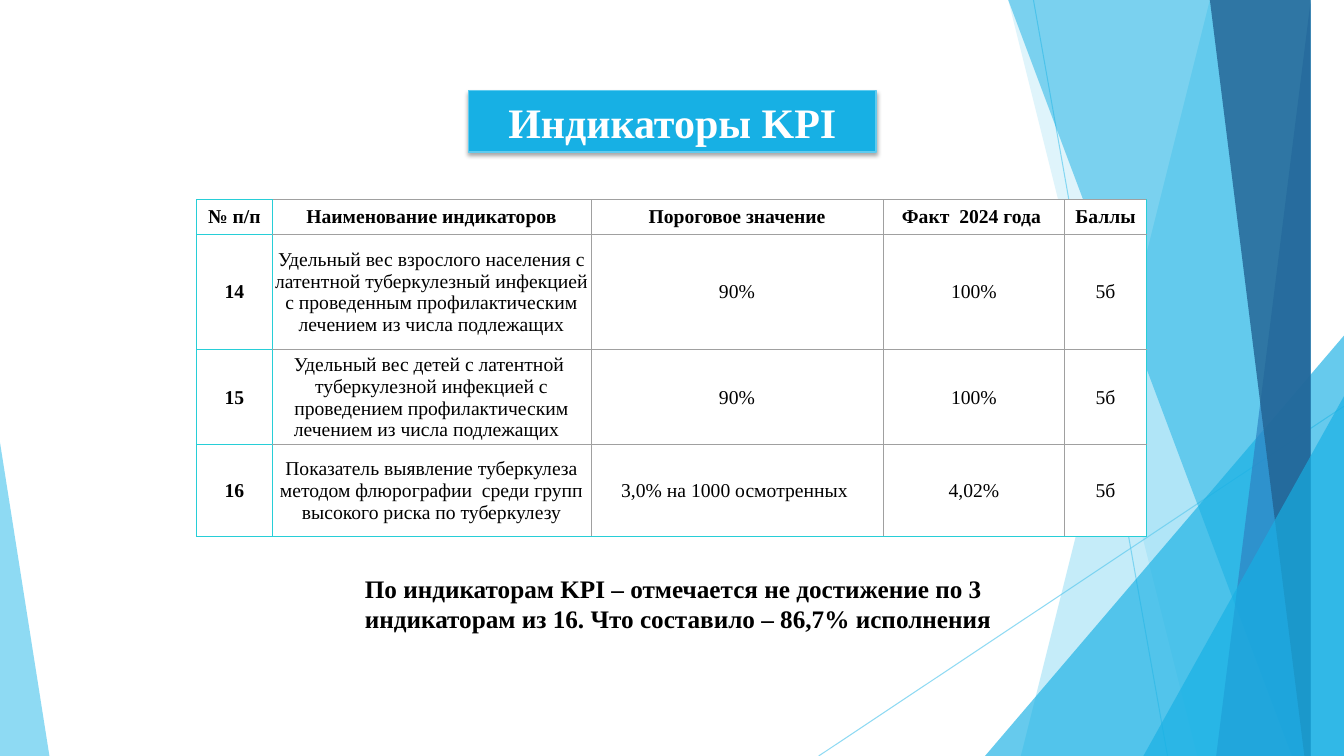
from lxml import etree
from pptx import Presentation
from pptx import util as u
from pptx.dml.color import RGBColor
from pptx.enum import shapes, text
from pptx.oxml.ns import qn

FONT = "Times New Roman"
SKY, BLUE, TEAL, GREY = "5FCBEF", "17B0E4", "27CED7", "A0A0A0"
WIDE, HIGH = 13.33, 7.5

RAYS = [((10.25, 0), (11.58, HIGH)), ((WIDE, 4.03), (8.12, HIGH))]
BANDS = [
    ("band", 12.28, 10.04, SKY, 36),
    ("band", 10.5, 11.83, SKY, 20),
    ("peak", (9.77, 3.33, 3.56, 4.17), 1, BLUE, 66),
    ("band", 10.21, 12.91, BLUE, 50),
    ("band", 13.03, 11.92, "2E83C3", 70),
    ("band", 11.96, 13.18, "226292", 80),
    ("peak", (11.34, 3.93, 1.99, 3.57), 1, BLUE, 66),
    ("peak", (0, 4.39, 0.49, 3.11), 0, SKY, 70),
]
TITLE = "Индикаторы KPI"
COLS = [0.75, 3.16, 2.9, 1.8, 0.81]
ROWS = [0.34, 1.15, 0.94, 0.91]
CELLS = [
    ("№ п/п", "Наименование индикаторов", "Пороговое значение",
     "Факт  2024 года ", "Баллы"),
    ("14", "Удельный вес взрослого населения с латентной туберкулезный "
     "инфекцией с проведенным профилактическим лечением из числа подлежащих",
     "90%", "100%", "5б"),
    ("15", "Удельный вес детей с латентной  туберкулезной инфекцией с "
     "проведением профилактическим лечением из числа подлежащих  ",
     "90%", "100%", "5б"),
    ("16", "Показатель выявление туберкулеза методом флюрографии  среди "
     "групп высокого риска по туберкулезу",
     "3,0% на 1000 осмотренных ", "4,02%", "5б"),
]
NOTE = ("По индикаторам KPI – отмечается не достижение по 3 индикаторам "
        "из 16. Что составило – 86,7% исполнения")


def paint(form, tone, alpha=100):
    form.solid()
    form.fore_color.rgb = RGBColor.from_string(tone)
    if alpha < 100:
        node = form._xPr.find(".//" + qn("a:srgbClr"))
        etree.SubElement(node, qn("a:alpha"), val=str(alpha * 1000))


def write(frame, words, size, tone="000000", bold=True, align=None):
    frame.word_wrap = True
    para = frame.paragraphs[0]
    para.alignment = align
    run = para.add_run()
    run.text = words
    run.font.size = u.Pt(size)
    run.font.name = FONT
    run.font.bold = bold
    paint(run.font.fill, tone)


def inch(*sizes):
    return [u.Inches(size) for size in sizes]


def add_ray(slide, start, end):
    ray = slide.shapes.add_connector(
        shapes.MSO_CONNECTOR.STRAIGHT, *inch(*start, *end))
    ray.line.width = u.Pt(0.75)
    paint(ray.line.fill, SKY, 70)
    etree.SubElement(ray._element.spPr, qn("a:effectLst"))


def add_band(slide, kind, place, tip, tone, alpha):
    if kind == "band":
        path = slide.shapes.build_freeform(place, 0, scale=u.Inches(1))
        path.add_line_segments([(WIDE, 0), (WIDE, HIGH), (tip, HIGH)])
        part = path.convert_to_shape()
    else:
        part = slide.shapes.add_shape(
            shapes.MSO_SHAPE.ISOSCELES_TRIANGLE, *inch(*place))
        part.adjustments[0] = tip
    part.shadow.inherit = False
    part.line.fill.background()
    paint(part.fill, tone, alpha)


def add_title(slide):
    box = slide.shapes.add_shape(
        shapes.MSO_SHAPE.RECTANGLE, *inch(4.65, 0.9, 4.04, 0.61))
    paint(box.fill, BLUE)
    paint(box.line.fill, SKY)
    box.line.width = u.Pt(1)
    box.shadow.inherit = False
    glow = etree.SubElement(
        box._element.spPr.find(qn("a:effectLst")), qn("a:outerShdw"),
        blurRad=str(u.Pt(3)), dist=str(u.Pt(2)), dir="5400000", rotWithShape="0")
    shade = etree.SubElement(glow, qn("a:srgbClr"), val="000000")
    etree.SubElement(shade, qn("a:alpha"), val="35000")
    box.text_frame.vertical_anchor = text.MSO_ANCHOR.MIDDLE
    write(box.text_frame, TITLE, 30, "FFFFFF", align=text.PP_ALIGN.CENTER)


def edge(cell, row, col):
    prop = cell._tc.get_or_add_tcPr()
    teal = {
        "lnL": col < 2,
        "lnR": col in (0, len(COLS) - 1),
        "lnT": col == 0,
        "lnB": col == 0 or row == len(ROWS) - 1,
    }
    for spot, (side, match) in enumerate(teal.items()):
        line = etree.Element(qn("a:" + side), w=str(u.Pt(0.5)))
        fill = etree.SubElement(line, qn("a:solidFill"))
        etree.SubElement(fill, qn("a:srgbClr"), val=TEAL if match else GREY)
        prop.insert(spot, line)


def add_grid(slide):
    grid = slide.shapes.add_table(
        len(ROWS), len(COLS), *inch(1.95, 1.98, sum(COLS), sum(ROWS))).table
    for col, size in zip(grid.columns, COLS):
        col.width = u.Inches(size)
    for row, size in zip(grid.rows, ROWS):
        row.height = u.Inches(size)
    for r, line in enumerate(CELLS):
        for c, words in enumerate(line):
            cell = grid.cell(r, c)
            cell.margin_left = cell.margin_right = cell.margin_top = u.Inches(0.01)
            cell.margin_bottom = 0
            cell.vertical_anchor = text.MSO_ANCHOR.MIDDLE
            paint(cell.fill, "FFFFFF")
            edge(cell, r, c)
            write(cell.text_frame, words, 14, bold=r == 0 or c == 0,
                  align=text.PP_ALIGN.CENTER)


def main():
    deck = Presentation()
    deck.slide_width, deck.slide_height = inch(WIDE, HIGH)
    slide = deck.slides.add_slide(deck.slide_layouts[6])
    for ray in RAYS:
        add_ray(slide, *ray)
    for band in BANDS:
        add_band(slide, *band)
    add_title(slide)
    add_grid(slide)
    note = slide.shapes.add_textbox(*inch(3.52, 5.64, 6.48, 0.71))
    write(note.text_frame, NOTE, 18)
    deck.save("out.pptx")


if __name__ == "__main__":
    main()
